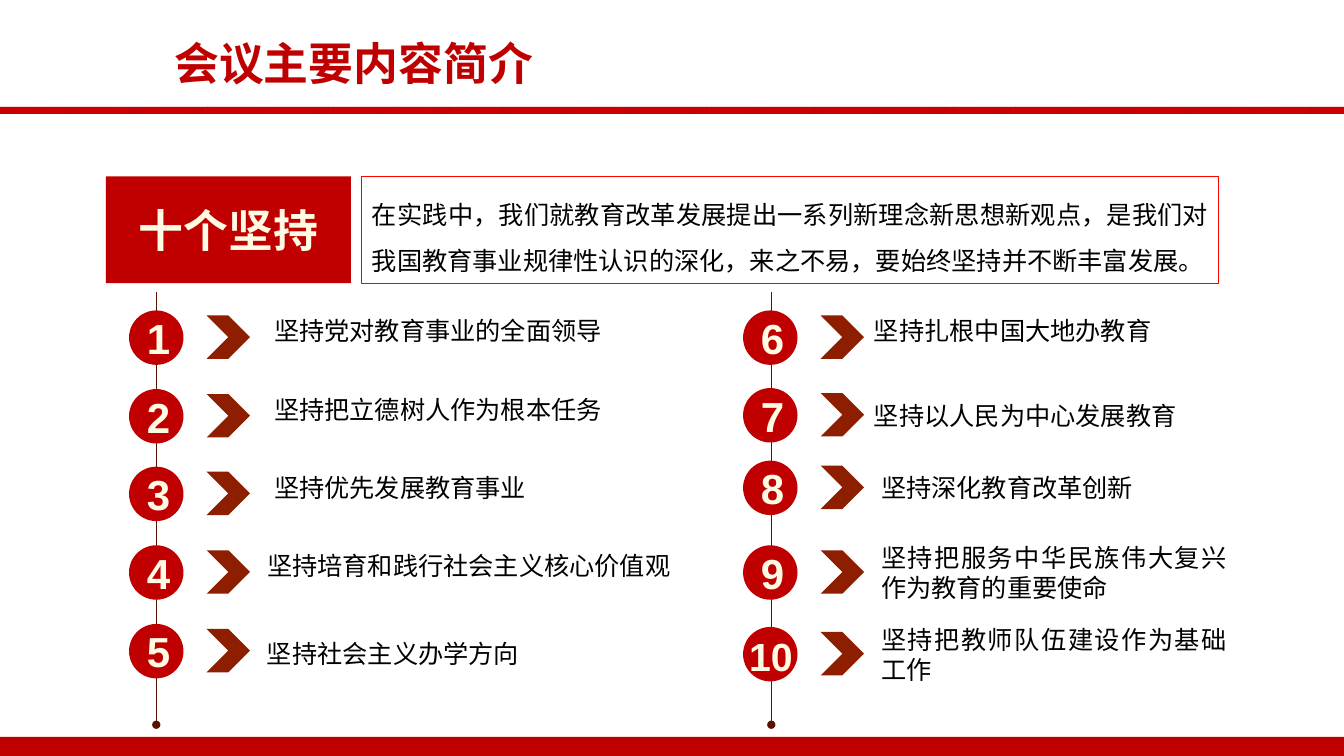
"""Build the slide that lists the ten commitments in two numbered columns."""
from lxml.etree import SubElement
from pptx import Presentation
from pptx.dml.color import RGBColor
from pptx.enum.dml import MSO_PATTERN
from pptx.enum.shapes import MSO_CONNECTOR, MSO_SHAPE as SHAPE
from pptx.enum.text import MSO_ANCHOR as ANCHOR, MSO_AUTO_SIZE, PP_ALIGN as ALIGN
from pptx.oxml.ns import qn
from pptx.util import Inches, Pt

RED = RGBColor(0xC0, 0x00, 0x00)
BRIGHT_RED = RGBColor(0xFF, 0x00, 0x00)
BROWN = RGBColor(0x8E, 0x1E, 0x00)
DARK_BROWN = RGBColor(0x59, 0x13, 0x00)
CREAM = RGBColor(0xFF, 0xFA, 0xE3)
BLACK = RGBColor(0x00, 0x00, 0x00)
CJK = "Noto Sans CJK SC"

prs = Presentation()
prs.slide_width, prs.slide_height = Inches(13.33), Inches(7.5)
s = prs.slides.add_slide(prs.slide_layouts[6])


def add_box(kind, x, y, w, h, fill=None):
    """Add a plain shape, or a text box when kind is None."""
    box = [Inches(v) for v in (x, y, w, h)]
    if kind is None:
        sp = s.shapes.add_textbox(*box)
        sp.text_frame.auto_size = MSO_AUTO_SIZE.SHAPE_TO_FIT_TEXT
    else:
        sp = s.shapes.add_shape(kind, *box)
        sp.shadow.inherit = False
        sp.line.fill.background()
        if fill is None:
            sp.fill.background()
        else:
            sp.fill.solid()
            sp.fill.fore_color.rgb = fill
        sp.text_frame.vertical_anchor = ANCHOR.MIDDLE
    sp.text_frame.word_wrap = True
    return sp


def write(sp, text, size, color, bold=False, align=ALIGN.JUSTIFY, font="Arial", spacing=None):
    """Write one run of text into a shape."""
    p = sp.text_frame.paragraphs[0]
    p.alignment = align
    if spacing:
        p.line_spacing = spacing
    r = p.add_run()
    r.text = text
    r.font.size, r.font.bold, r.font.name = Pt(size), bold, font
    r.font.color.rgb = color
    SubElement(r.font._element, qn("a:ea"), typeface=CJK)


add_box(SHAPE.RECTANGLE, 0, 7.31, 13.33, 0.19, RED)
rule = add_box(SHAPE.RECTANGLE, 0, 1.06, 13.33, 0.07)
rule.fill.patterned()
rule.fill.pattern = MSO_PATTERN.DARK_UPWARD_DIAGONAL
rule.fill.fore_color.rgb = BRIGHT_RED
rule.fill.back_color.rgb = RED

title = add_box(None, 1.63, 0.31, 6.77, 0.64)
write(title, "会议主要内容简介", 32, RED, True, ALIGN.LEFT, CJK)

heading = add_box(SHAPE.ROUNDED_RECTANGLE, 1.05, 1.75, 2.43, 1.06, RED)
heading.adjustments[0] = 0
write(heading, "十个坚持", 32, CREAM, True, ALIGN.CENTER, CJK)

summary = add_box(SHAPE.ROUNDED_RECTANGLE, 3.59, 1.75, 8.5, 1.06)
summary.adjustments[0] = 0
summary.line.color.rgb = BRIGHT_RED
summary.line.width = Pt(0.75)
write(summary, "在实践中，我们就教育改革发展提出一系列新理念新思想新观点，是我们对"
      "我国教育事业规律性认识的深化，来之不易，要始终坚持并不断丰富发展。",
      18, BLACK, font=CJK, spacing=1.5)

# Each item: circle top, then text left, top, width, height, line spacing, wording
columns = [
    (1.28, 1.55, [
        (3.08, 2.62, 3.08, 4.65, 0.4, None, "坚持党对教育事业的全面领导"),
        (3.86, 2.62, 3.86, 4.65, 0.4, None, "坚持把立德树人作为根本任务"),
        (4.63, 2.62, 4.64, 4.39, 0.4, None, "坚持优先发展教育事业"),
        (5.41, 2.55, 5.41, 4.65, 0.4, None, "坚持培育和践行社会主义核心价值观"),
        (6.19, 2.55, 6.22, 4.46, 0.46, 1.2, "坚持社会主义办学方向"),
    ]),
    (7.37, 7.65, [
        (3.08, 8.57, 3.08, 3.7, 0.4, None, "坚持扎根中国大地办教育"),
        (3.85, 8.57, 3.92, 3.96, 0.4, None, "坚持以人民为中心发展教育"),
        (4.57, 8.64, 4.64, 3.34, 0.4, None, "坚持深化教育改革创新"),
        (5.41, 8.64, 5.33, 3.63, 0.71, None, "坚持把服务中华民族伟大复兴作为教育的重要使命"),
        (6.22, 8.64, 6.14, 3.63, 0.71, None, "坚持把教师队伍建设作为基础工作"),
    ]),
]

number = 0
for left, axis, items in columns:
    line = s.shapes.add_connector(MSO_CONNECTOR.STRAIGHT, Inches(axis), Inches(2.9),
                                  Inches(axis), Inches(7.19))
    line.line.color.rgb = DARK_BROWN
    line.line.width = Pt(0.5)
    SubElement(line.line._get_or_add_ln(), qn("a:tailEnd"), type="oval")
    SubElement(line._element.spPr, qn("a:effectLst"))

    for top, x, y, w, h, spacing, wording in items:
        number += 1
        circle = add_box(SHAPE.ROUNDED_RECTANGLE, left, top, 0.54, 0.54, RED)
        circle.adjustments[0] = 0.5
        add_box(SHAPE.CHEVRON, left + 0.77, top + 0.05, 0.43, 0.43, BROWN)
        write(add_box(None, x, y, w, h), wording, 18, BLACK, spacing=spacing)
        if number < 10:
            write(circle, str(number), 30, CREAM, True, ALIGN.CENTER)
        else:
            label = add_box(None, left - 0.1, top, 0.75, 0.57)
            write(label, str(number), 28, CREAM, True, ALIGN.CENTER)

prs.save("out.pptx")
